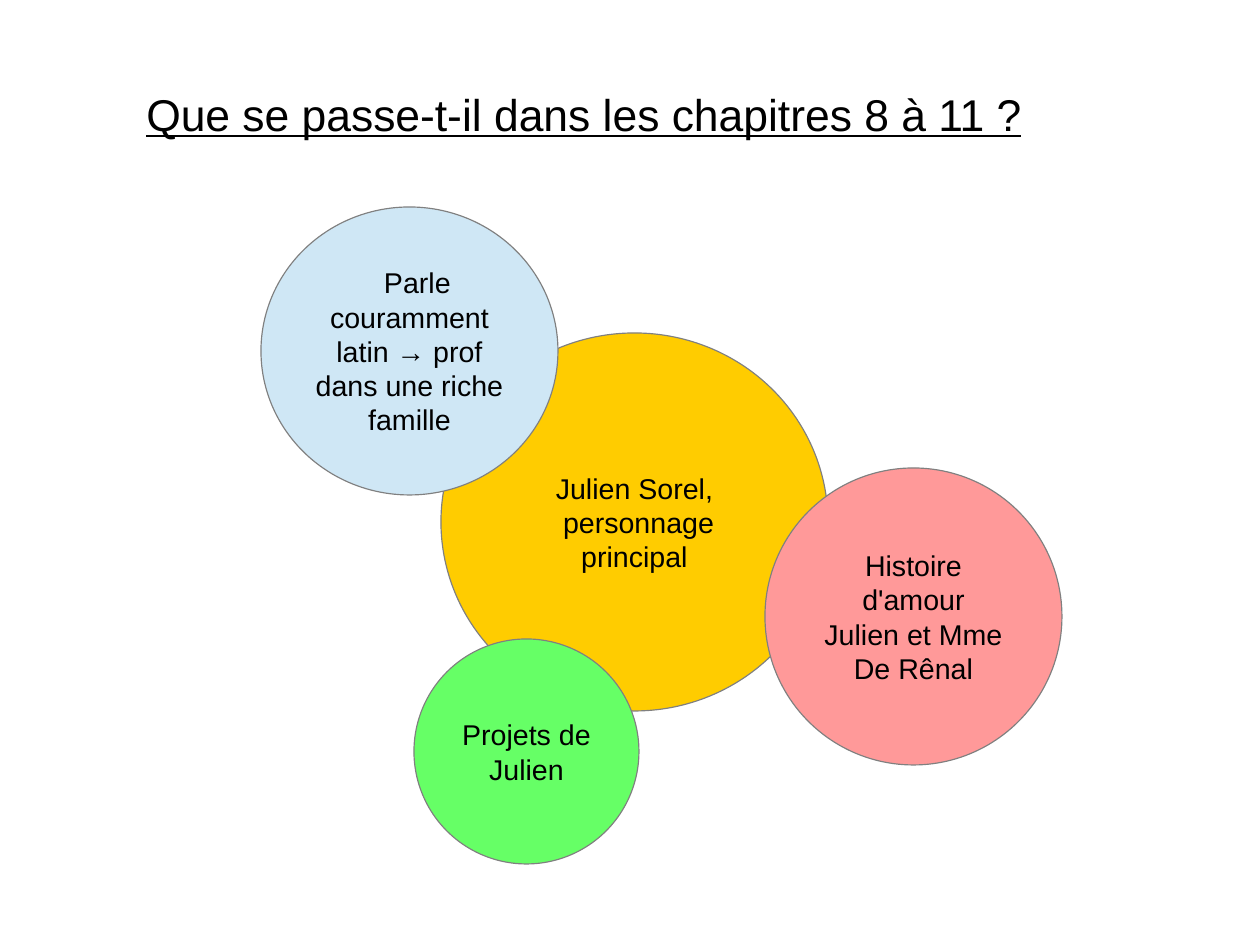
from dataclasses import dataclass

from pptx import Presentation
from pptx.dml.color import RGBColor
from pptx.enum.shapes import MSO_SHAPE as Shape
from pptx.enum.text import MSO_ANCHOR as Anchor, MSO_AUTO_SIZE as AutoSize, PP_ALIGN as Align
from pptx.util import Cm, Pt


@dataclass(frozen=True)
class Theme:
    """Colours, font and type sizes of the slide."""
    font: str = "Arial"
    title_size: int = 28
    body_size: int = 18
    text: str = "000000"
    outline: str = "808080"
    yellow: str = "FFCC00"
    blue: str = "CFE7F5"
    red: str = "FF9999"
    green: str = "66FF66"


THEME = Theme()


def write(box, lines, size=THEME.body_size, align=Align.CENTER, anchor=Anchor.MIDDLE,
          underline=False, wrap=True, inset=0.13, indents=None):
    """Fill a shape with paragraphs; indents maps a line number to centimetres."""
    frame = box.text_frame
    frame.word_wrap = wrap
    frame.auto_size = AutoSize.NONE
    frame.vertical_anchor = anchor
    frame.margin_left = frame.margin_right = Cm(inset)
    frame.margin_top = frame.margin_bottom = Cm(0.13)
    for number, line in enumerate(lines):
        para = frame.add_paragraph() if number else frame.paragraphs[0]
        para.alignment = align
        para.line_spacing = 1.0
        para.space_before = para.space_after = Pt(0)
        indent = (indents or {}).get(number)
        if indent:
            para._p.get_or_add_pPr().set("indent", str(Cm(indent)))
        span = para.add_run()
        span.text = line
        span.font.name = THEME.font
        span.font.size = Pt(size)
        span.font.underline = underline
        span.font.color.rgb = RGBColor.from_string(THEME.text)


def add_title(page, text):
    """Place the underlined title in its placeholder."""
    title = page.shapes.title
    title.left, title.top, title.width, title.height = Cm(3), Cm(1.8), Cm(20.8), Cm(1.35)
    write(title, [text], size=THEME.title_size, align=Align.LEFT, anchor=Anchor.TOP,
          underline=True, wrap=False, inset=0.25)


def add_bubble(page, left, top, width, height, colour, lines, indents=None):
    """Draw one filled bubble with its centred text."""
    bubble = page.shapes.add_shape(Shape.OVAL, Cm(left), Cm(top), Cm(width), Cm(height))
    bubble.shadow.inherit = False
    bubble.fill.solid()
    bubble.fill.fore_color.rgb = RGBColor.from_string(colour)
    bubble.line.color.rgb = RGBColor.from_string(THEME.outline)
    bubble.line.width = Pt(0)
    write(bubble, lines, indents=indents)


def main():
    """Build and save the slide."""
    deck = Presentation()
    deck.slide_width, deck.slide_height = Cm(28), Cm(21)
    page = deck.slides.add_slide(deck.slide_layouts[5])
    add_title(page, "Que se passe-t-il dans les chapitres 8 à 11 ?")
    add_bubble(page, 9.8, 7.4, 8.6, 8.4, THEME.yellow,
               ["Julien Sorel,", "personnage principal"], indents={1: 0.18})
    add_bubble(page, 5.8, 4.6, 6.6, 6.4, THEME.blue,
               ["Parle couramment", "latin → prof", "dans une riche", "famille"],
               indents={0: 0.35})
    add_bubble(page, 17, 10.4, 6.6, 6.6, THEME.red,
               ["Histoire d'amour", "Julien et Mme", "De Rênal"])
    add_bubble(page, 9.2, 14.2, 5, 5, THEME.green, ["Projets de", "Julien"])
    deck.save("out.pptx")


if __name__ == "__main__":
    main()
